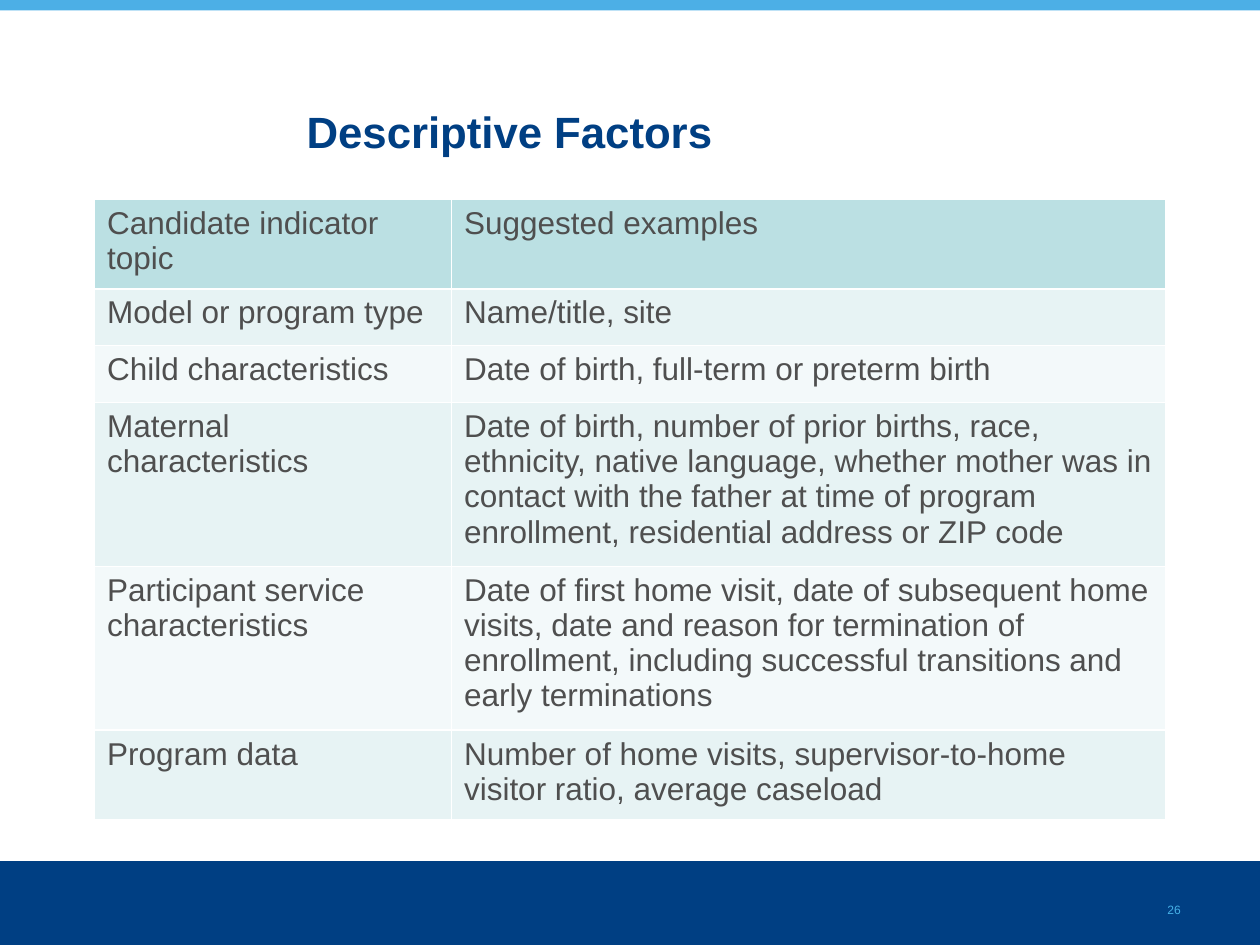
import pptx
import pptx.util
import pptx.dml.color
import pptx.enum.shapes
import pptx.enum.text
import pptx.oxml.ns
import lxml.etree

Pt = pptx.util.Pt
COLORS = {
    "navy": "003F83", "sky": "4CAFE6", "number": "46B0E7", "text": "4F4F4F",
    "header": "BBE0E3", "odd": "E7F3F4", "even": "F3F9FA", "white": "FFFFFF",
}
ROWS = [
    ("Candidate indicator topic", "Suggested examples"),
    ("Model or program type", "Name/title, site"),
    ("Child characteristics", "Date of birth, full-term or preterm birth"),
    ("Maternal characteristics",
     "Date of birth, number of prior births, race, ethnicity, native language, "
     "whether mother was in contact with the father at time of program "
     "enrollment, residential address or ZIP code"),
    ("Participant service characteristics",
     "Date of first home visit, date of subsequent home visits, date and reason "
     "for termination of enrollment, including successful transitions and early "
     "terminations"),
    ("Program data",
     "Number of home visits, supervisor-to-home visitor ratio, average caseload"),
]
COLUMN_WIDTHS = [204, 408]
ROW_HEIGHTS = [51, 32.5, 32.5, 72, 82, 51]


def rgb(name):
    return pptx.dml.color.RGBColor.from_string(COLORS[name])


class SlideBuilder:
    font_name = "Arial"

    def __init__(self, slide):
        self.slide = slide

    def style(self, para, size, color, bold=False):
        para.font.name = self.font_name
        para.font.size = Pt(size)
        para.font.bold = bold
        para.font.color.rgb = rgb(color)

    def band(self, left, top, width, height, color):
        shape = self.slide.shapes.add_shape(
            pptx.enum.shapes.MSO_SHAPE.RECTANGLE,
            Pt(left), Pt(top), Pt(width), Pt(height))
        shape.shadow.inherit = False
        shape.fill.solid()
        shape.fill.fore_color.rgb = rgb(color)
        shape.line.fill.background()

    def title(self, text, left, top, width, height):
        title = self.slide.shapes.title
        title.left, title.top = Pt(left), Pt(top)
        title.width, title.height = Pt(width), Pt(height)
        frame = title.text_frame
        frame.text = text
        frame.auto_size = pptx.enum.text.MSO_AUTO_SIZE.NONE
        frame.vertical_anchor = pptx.enum.text.MSO_ANCHOR.MIDDLE
        para = frame.paragraphs[0]
        para.alignment = pptx.enum.text.PP_ALIGN.LEFT
        self.style(para, 25, "navy", bold=True)

    def page_number(self, text, left, top, width, height):
        box = self.slide.shapes.add_textbox(Pt(left), Pt(top), Pt(width), Pt(height))
        para = box.text_frame.paragraphs[0]
        span = para.add_run()
        span.text = text
        self.style(para, 12, "number")
        span.font._element.set("baseline", "-25000")

    def borders(self, cell):
        properties = cell._tc.get_or_add_tcPr()
        for position, side in enumerate(("lnL", "lnR", "lnT", "lnB")):
            line = lxml.etree.Element(pptx.oxml.ns.qn("a:" + side), w=str(Pt(1)))
            fill = lxml.etree.SubElement(line, pptx.oxml.ns.qn("a:solidFill"))
            lxml.etree.SubElement(
                fill, pptx.oxml.ns.qn("a:srgbClr"), val=COLORS["white"])
            properties.insert(position, line)

    def table(self, rows, left, top, widths, heights):
        table = self.slide.shapes.add_table(
            len(rows), len(widths), Pt(left), Pt(top),
            Pt(sum(widths)), Pt(sum(heights))).table
        for column, width in zip(table.columns, widths):
            column.width = Pt(width)
        for index, (row, height) in enumerate(zip(table.rows, heights)):
            row.height = Pt(height)
            color = "header" if index == 0 else "odd" if index % 2 else "even"
            for cell, text in zip(row.cells, rows[index]):
                cell.text = text
                cell.fill.solid()
                cell.fill.fore_color.rgb = rgb(color)
                self.style(cell.text_frame.paragraphs[0], 18, "text")
                self.borders(cell)


def main():
    deck = pptx.Presentation()
    deck.slide_width, deck.slide_height = Pt(720), Pt(540)
    page = SlideBuilder(deck.slides.add_slide(deck.slide_layouts[5]))
    page.band(0, 492, 720, 48, "navy")
    page.band(0, 0, 720, 6, "sky")
    page.page_number("26", 660, 504, 24.5, 16.5)
    page.title("Descriptive Factors", 168, 54, 486, 42)
    page.table(ROWS, 54, 114, COLUMN_WIDTHS, ROW_HEIGHTS)
    deck.save("out.pptx")


if __name__ == "__main__":
    main()
